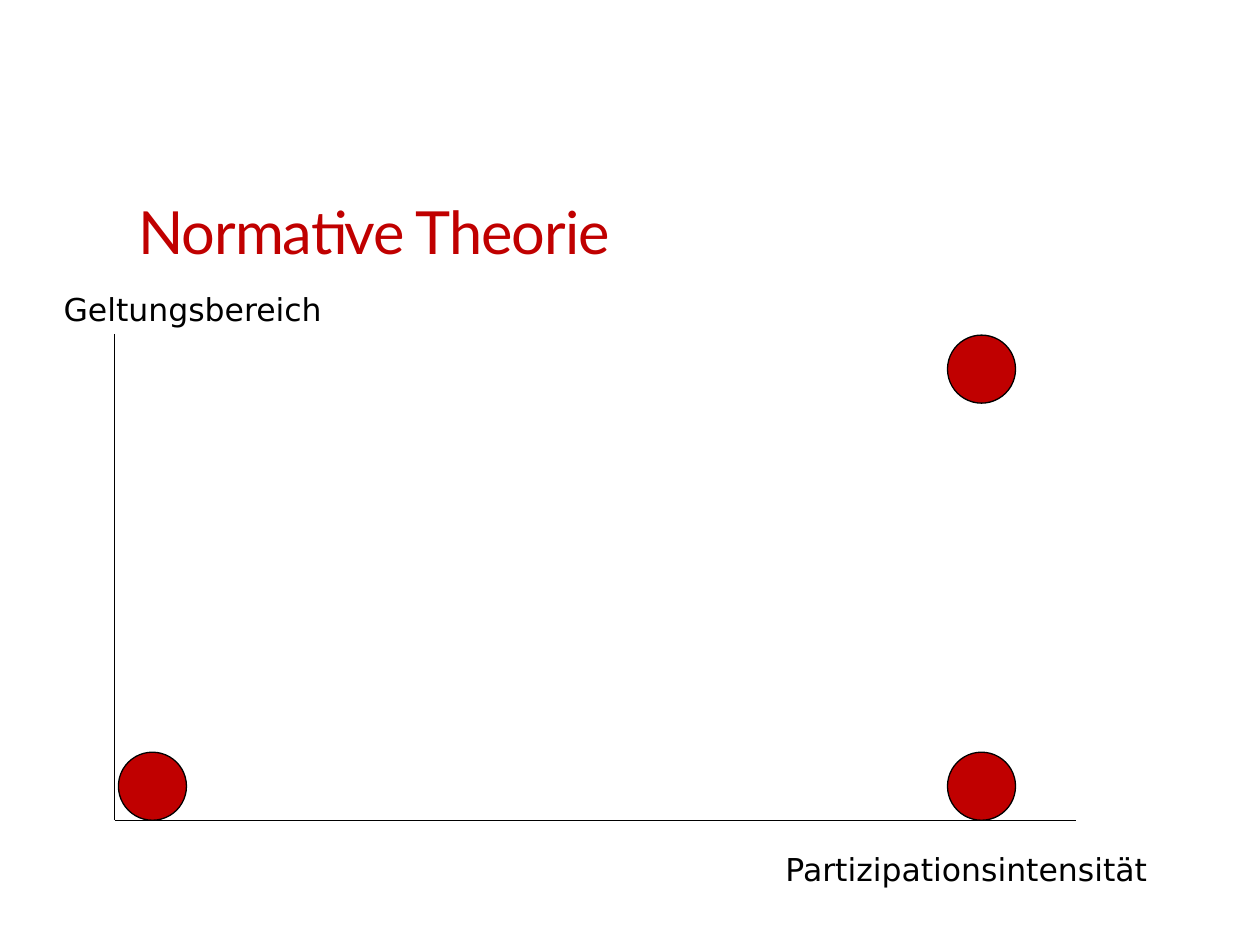
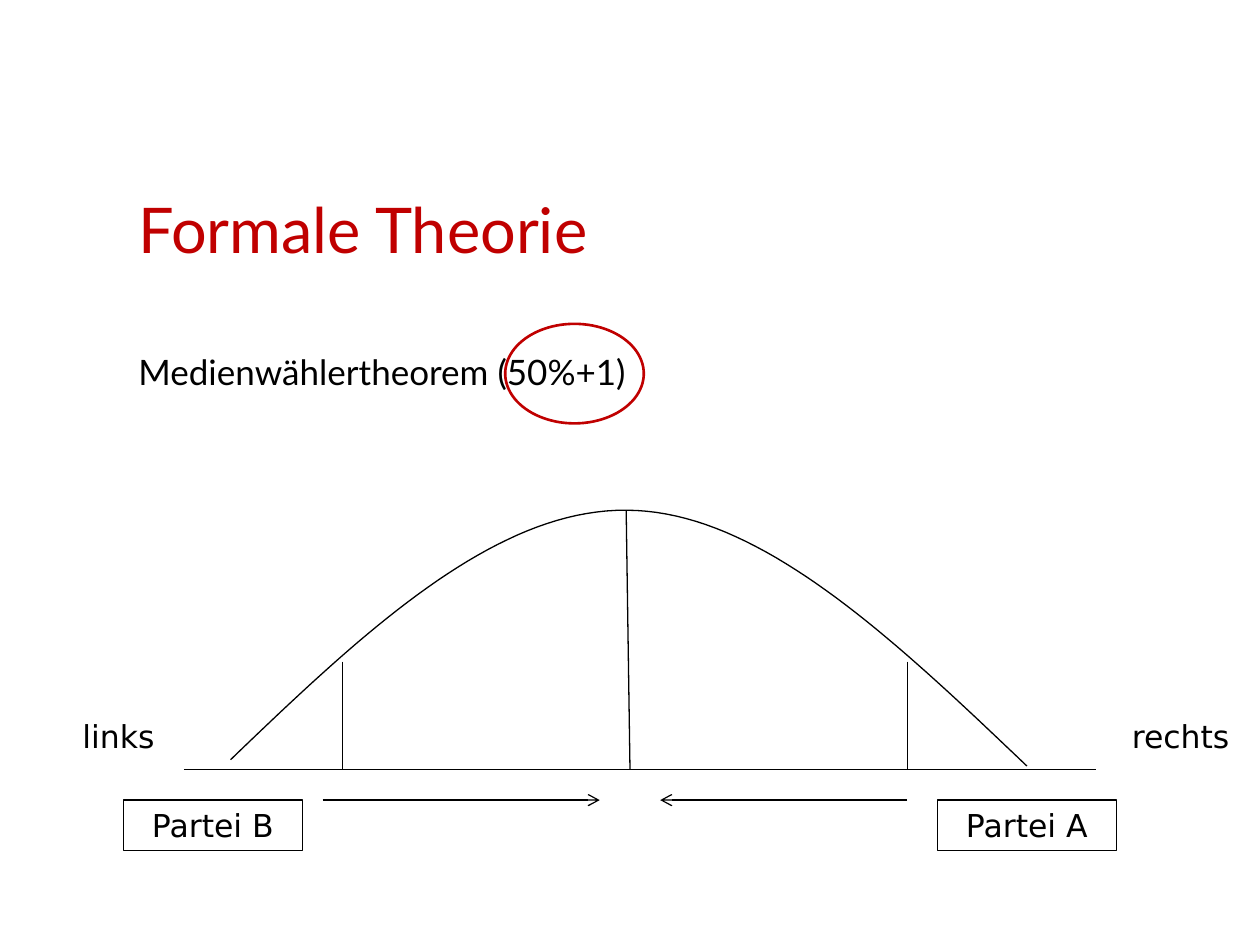
from dataclasses import dataclass

from lxml.etree import SubElement
from pptx import Presentation
from pptx.dml.color import RGBColor
from pptx.enum.shapes import MSO_CONNECTOR, MSO_SHAPE
from pptx.enum.text import MSO_ANCHOR, PP_ALIGN
from pptx.oxml.ns import qn
from pptx.util import Inches, Pt


@dataclass(frozen=True)
class Theme:
    red: str = "C00000"
    black: str = "000000"
    head_font: str = "Lato"
    label_font: str = "DejaVu Sans"
    body_size: int = 20
    label_size: int = 18
    thin: float = 0.75
    thick: float = 1.5


T = Theme()

# Slide 1: two axes and the positions of the theories between them
NORMATIVE = dict(title="Normative Theorie", size=34, width=8.65, spacing=-0.6)
ORIGIN, AXIS_TOP, AXIS_RIGHT = (0.91, 6.51), 2.65, 8.54
AXIS_LABELS = [
    ("Geltungsbereich", 0.31, 2.25, 2.44),
    ("Partizipationsintensität", 5.94, 6.7, 3.46),
]
DOT = 0.54
LOW_X, HIGH_X, HIGH_Y = 0.94, 7.52, 2.66
LOW_Y = ORIGIN[1] - DOT
DOTS = [(HIGH_X, HIGH_Y), (LOW_X, LOW_Y), (HIGH_X, LOW_Y)]

# Slide 2: voters between left and right, parties moving to the median
FORMAL = dict(title="Formale Theorie", size=36, width=8)
THEOREM = "Medienwählertheorem (50%+1)"
MAJORITY_RING = (4.01, 2.57, 1.1, 0.79)
BASE_Y, BASE_X = 6.11, (1.46, 8.7)
PEAK = (4.97, 4.05)
CURVE = [
    [(1.83, 6.03), (2.87, 5.03), (3.92, 4.04), PEAK],
    [PEAK, (6.02, 4.05), (7.09, 5.07), (8.15, 6.08)],
]
CURVE_STEPS = 40
SIDES = [("links", 0.43), ("rechts", 8.86)]
SIDE_Y, SIDE_W = 5.64, 1.02
PARTY_Y, PARTY_W = 6.35, 1.42
# party, box left, position on the scale, arrow start, arrow end
PARTIES = [
    ("Partei A", 7.44, 7.2, 7.2, 5.24),
    ("Partei B", 0.98, 2.72, 2.56, 4.76),
]
POSITION_TOP, LABEL_H = 5.25, 0.4


def rgb(color):
    return RGBColor.from_string(color)


def inches(*values):
    return [Inches(v) for v in values]


def write(sp, text, font=T.label_font, size=T.label_size, color=T.black,
          align=PP_ALIGN.CENTER, anchor=MSO_ANCHOR.TOP, spacing=0):
    tf = sp.text_frame
    tf.word_wrap = True
    tf.vertical_anchor = anchor
    p = tf.paragraphs[0]
    p.alignment = align
    r = p.add_run()
    r.text = text
    r.font.name, r.font.size = font, Pt(size)
    r.font.color.rgb = rgb(color)
    if spacing:
        r.font._element.set("spc", str(round(spacing * 100)))


def add_text(s, text, x, y, w, h=LABEL_H, **fmt):
    write(s.shapes.add_textbox(*inches(x, y, w, h)), text, **fmt)


def style(sp, fill=None, line=T.black, weight=T.thin):
    sp.shadow.inherit = False
    if fill:
        sp.fill.solid()
        sp.fill.fore_color.rgb = rgb(fill)
    else:
        sp.fill.background()
    sp.line.color.rgb = rgb(line)
    sp.line.width = Pt(weight)


def add_shape(s, kind, x, y, w, h, **look):
    sp = s.shapes.add_shape(kind, *inches(x, y, w, h))
    style(sp, **look)
    return sp


def add_line(s, start, end, arrow=False):
    c = s.shapes.add_connector(MSO_CONNECTOR.STRAIGHT, *inches(*start, *end))
    c.line.color.rgb = rgb(T.black)
    c.line.width = Pt(T.thin)
    if arrow:
        SubElement(c.line._get_or_add_ln(), qn("a:tailEnd"), type="arrow")
    SubElement(c._element.spPr, qn("a:effectLst"))


def bezier(points, t):
    """Point at t (0 to 1) on the cubic curve with four control points."""
    weights = ((1 - t) ** 3, 3 * t * (1 - t) ** 2, 3 * t * t * (1 - t), t ** 3)
    return tuple(Inches(sum(w * p[i] for w, p in zip(weights, points)))
                 for i in (0, 1))


def add_curve(s):
    points = [bezier(part, n / CURVE_STEPS)
              for part in CURVE for n in range(CURVE_STEPS + 1)]
    builder = s.shapes.build_freeform(*points[0])
    builder.add_line_segments(points[1:], close=False)
    style(builder.convert_to_shape())


def new_slide(prs, title, size, width, spacing=0):
    s = prs.slides.add_slide(prs.slide_layouts[6])
    add_text(s, title, 1, 0.91, width, 1.25, font=T.head_font, size=size,
             color=T.red, align=PP_ALIGN.LEFT, anchor=MSO_ANCHOR.BOTTOM,
             spacing=spacing)
    return s


def normative_slide(prs):
    s = new_slide(prs, **NORMATIVE)
    add_line(s, (ORIGIN[0], AXIS_TOP), ORIGIN)
    add_line(s, ORIGIN, (AXIS_RIGHT, ORIGIN[1]))
    for label in AXIS_LABELS:
        add_text(s, *label)
    for x, y in DOTS:
        add_shape(s, MSO_SHAPE.OVAL, x, y, DOT, DOT, fill=T.red)


def formal_slide(prs):
    s = new_slide(prs, **FORMAL)
    add_text(s, THEOREM, 1, 2.73, 8, 1.1, font=T.head_font, size=T.body_size,
             align=PP_ALIGN.LEFT)
    add_line(s, (BASE_X[0], BASE_Y), (BASE_X[1], BASE_Y))
    for side, x in SIDES:
        add_text(s, side, x, SIDE_Y, SIDE_W)
    add_curve(s)
    add_line(s, PEAK, (5, BASE_Y))
    for party, left, position, start, end in PARTIES:
        add_line(s, (position, POSITION_TOP), (position, BASE_Y))
        add_line(s, (start, PARTY_Y), (end, PARTY_Y), arrow=True)
        box = add_shape(s, MSO_SHAPE.RECTANGLE, left, PARTY_Y, PARTY_W, LABEL_H)
        write(box, party)
    add_shape(s, MSO_SHAPE.OVAL, *MAJORITY_RING, line=T.red, weight=T.thick)


def main():
    prs = Presentation()
    prs.slide_width, prs.slide_height = inches(10, 7.5)
    normative_slide(prs)
    formal_slide(prs)
    prs.save("out.pptx")


if __name__ == "__main__":
    main()
